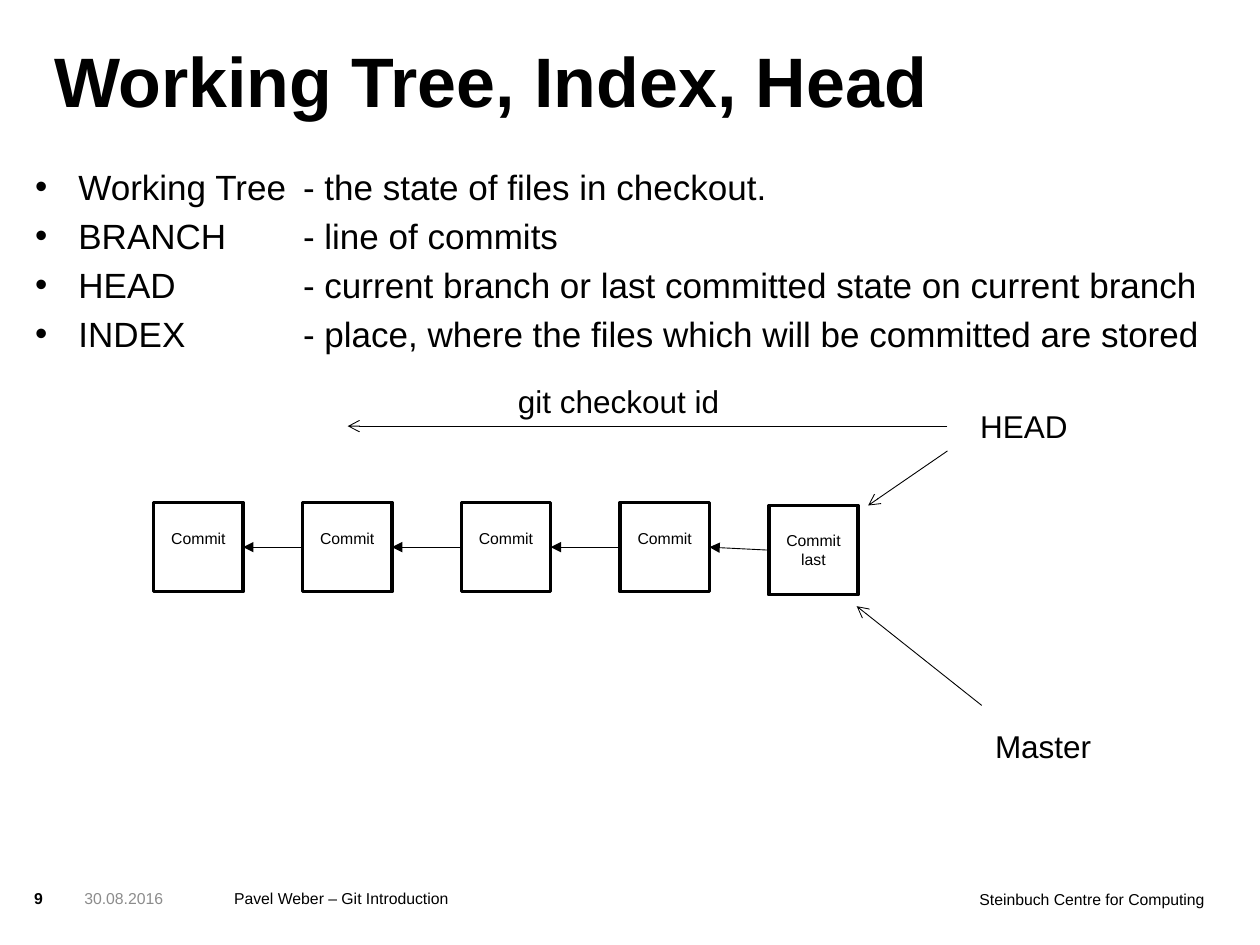
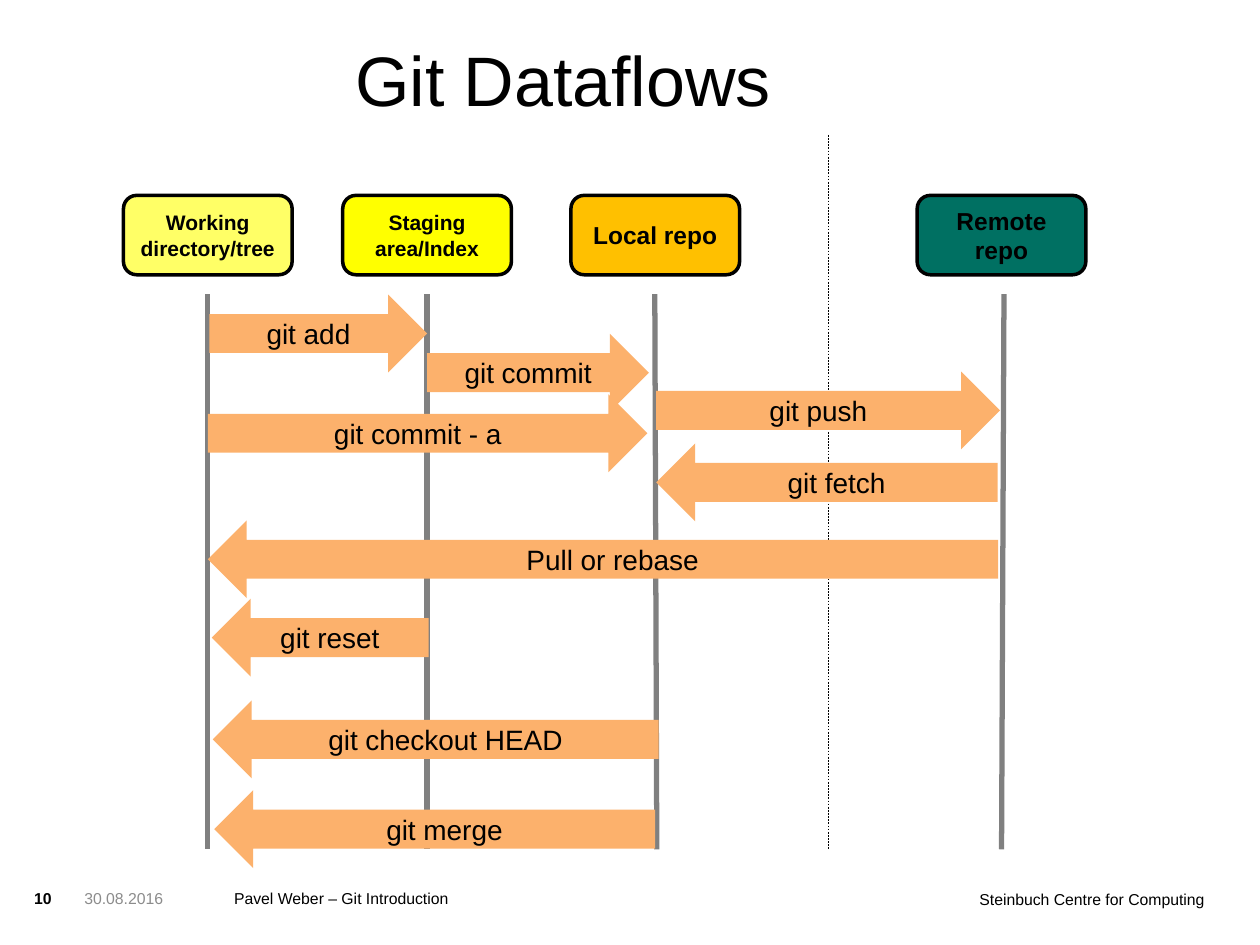
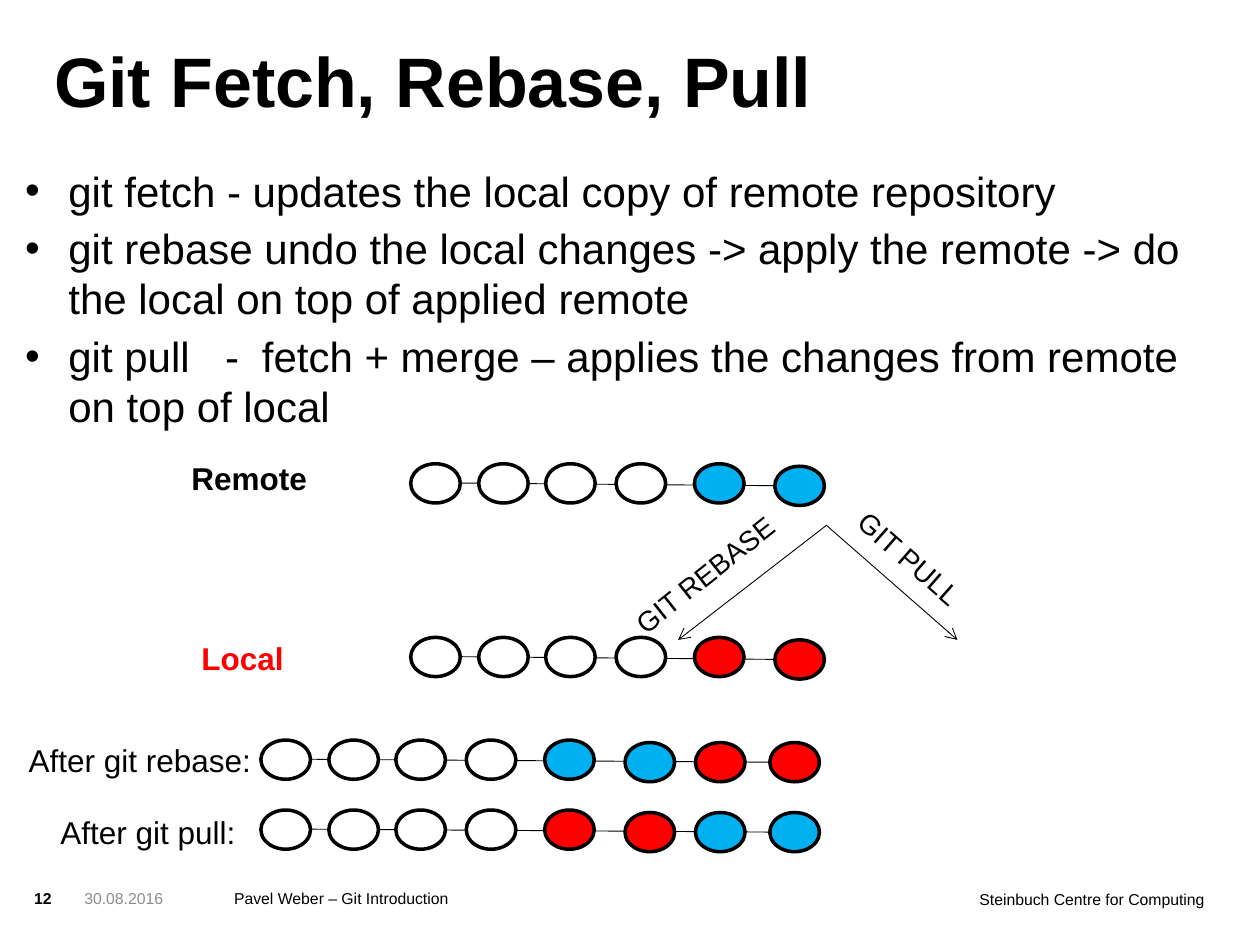
from lxml import etree
from pptx import Presentation
from pptx.dml.color import RGBColor
from pptx.enum.dml import MSO_LINE as Dash
from pptx.enum.shapes import MSO_CONNECTOR as Link, MSO_SHAPE as Kind
from pptx.enum.text import MSO_ANCHOR as Anchor, MSO_AUTO_SIZE as Fit, PP_ALIGN as Align
from pptx.oxml.ns import qn
from pptx.util import Cm, Pt

BLACK = RGBColor(0x00, 0x00, 0x00)
WHITE = RGBColor(0xFF, 0xFF, 0xFF)
GREY = RGBColor(0x80, 0x80, 0x80)
PALE = RGBColor(0x8C, 0x8C, 0x8C)
RED = RGBColor(0xFF, 0x00, 0x00)
BLUE = RGBColor(0x00, 0xB0, 0xF0)
LEMON = RGBColor(0xFF, 0xFF, 0x66)
YELLOW = RGBColor(0xFF, 0xFF, 0x00)
AMBER = RGBColor(0xFF, 0xC0, 0x00)
GREEN = RGBColor(0x00, 0x70, 0x62)
PEACH = RGBColor(0xFC, 0xB1, 0x6C)
FONT = "Arial"


class Deck:
    """Holds the style and the current slide."""

    def __init__(self):
        self.prs = Presentation()
        self.prs.slide_width, self.prs.slide_height = Cm(25.4), Cm(19.05)
        self.slide = None

    def page(self, number):
        """Start a slide with its footer."""
        self.slide = self.prs.slides.add_slide(self.prs.slide_layouts[6])
        self.block(16.69, 17.93, 7.59, 1, "Steinbuch Centre for Computing", 9, align=Align.RIGHT)
        self.block(0.69, 17.91, 0.91, 0.6, str(number), 9, bold=True)
        self.block(4.72, 17.91, 11.81, 1, "Pavel Weber – Git Introduction", 9)
        self.block(1.7, 17.91, 2.9, 1, "30.08.2016", 9, PALE)

    def style(self, para, size, color=BLACK, bold=False, align=Align.LEFT):
        para.alignment = align
        font = para.font
        font.name, font.size, font.bold = FONT, Pt(size), bold
        font.color.rgb = color

    def box(self, x, y, w, h):
        return self.slide.shapes.add_textbox(Cm(x), Cm(y), Cm(w), Cm(h))

    def block(self, x, y, w, h, text, size, color=BLACK, bold=False, align=Align.LEFT):
        """Wrapped text without insets."""
        frame = self.box(x, y, w, h).text_frame
        frame.word_wrap = True
        frame.margin_left = frame.margin_right = frame.margin_top = frame.margin_bottom = 0
        frame.text = text
        self.style(frame.paragraphs[0], size, color, bold, align)
        return frame

    def title(self, text):
        frame = self.block(1.09, 0.91, 19.2, 1.55, text, 40, bold=True)
        frame.vertical_anchor = Anchor.BOTTOM

    def label(self, x, y, w, h, text, size=18, color=BLACK, bold=False, turn=0):
        """One unwrapped line of text."""
        box = self.box(x, y, w, h)
        box.rotation = turn
        frame = box.text_frame
        frame.word_wrap, frame.auto_size = False, Fit.SHAPE_TO_FIT_TEXT
        frame.text = text
        self.style(frame.paragraphs[0], size, color, bold)

    def bullets(self, x, w, items, size, tabs):
        frame = self.block(x, 3.33, w, 13.59, items[0], size)
        for item in items[1:]:
            frame.add_paragraph().text = item
        for i, para in enumerate(frame.paragraphs):
            if i:
                para.space_before = Pt(4)
            props = para._p.get_or_add_pPr()
            props.set("marL", str(Cm(0.87)))
            props.set("indent", str(Cm(-0.87)))
            etree.SubElement(props, qn("a:buFont"), typeface=FONT)
            etree.SubElement(props, qn("a:buChar"), char="•")
            stops = etree.SubElement(props, qn("a:tabLst"))
            for tab in tabs:
                etree.SubElement(stops, qn("a:tab"), pos=str(Cm(tab)), algn="l")
            self.style(para, size)

    def shape(self, kind, x, y, w, h, fill, edge=True, text="", size=9, bold=False):
        shape = self.slide.shapes.add_shape(kind, Cm(x), Cm(y), Cm(w), Cm(h))
        shape.shadow.inherit = False
        shape.fill.solid()
        shape.fill.fore_color.rgb = fill
        if edge:
            shape.line.color.rgb, shape.line.width = BLACK, Pt(2)
        else:
            shape.line.fill.background()
        if text:
            frame = shape.text_frame
            frame.text, frame.vertical_anchor = text, Anchor.MIDDLE
            for para in frame.paragraphs:
                self.style(para, size, bold=bold, align=Align.CENTER)
        return shape

    def line(self, x1, y1, x2, y2, color=BLACK, width=0.5, head=None):
        line = self.slide.shapes.add_connector(Link.STRAIGHT, Cm(x1), Cm(y1), Cm(x2), Cm(y2))
        line.line.color.rgb, line.line.width = color, Pt(width)
        if head:
            etree.SubElement(line.line._get_or_add_ln(), qn("a:tailEnd"), type=head)
        etree.SubElement(line._element.spPr, qn("a:effectLst"))
        return line

    def chain(self, x, y, colors):
        """Row of commits on a thread, the later ones a little lower."""
        steps = [0, 1.37, 2.72, 4.14, 5.72, 7.34, 8.76, 10.26][:len(colors)]
        self.line(x + 0.1, y + 0.38, x + steps[-1] + 0.86, y + 0.45, head="triangle")
        for i, (step, color) in enumerate(zip(steps, colors)):
            drop = 0.05 if i > 4 else 0
            self.shape(Kind.FLOWCHART_CONNECTOR, x + step, y + drop, 1, 0.79, color)


def trees(deck):
    deck.page(9)
    deck.title("Working Tree, Index, Head")
    deck.bullets(0.71, 23.8, [
        "Working Tree\t- the state of files in checkout.",
        "BRANCH\t- line of commits",
        "HEAD\t- current branch or last committed state on current branch",
        "INDEX\t- place, where the files which will be committed are stored",
    ], 20, [5.4])

    # Commits, each pointing back to the one before
    side, top = 1.8, 10.13
    boxes = []
    for x in (3.1, 6.1, 9.3, 12.5):
        box = deck.shape(Kind.RECTANGLE, x, top, side, side, WHITE, text="Commit")
        box.text_frame.margin_bottom = Cm(0.5)
        boxes.append(box)
    boxes.append(deck.shape(Kind.RECTANGLE, 15.5, top + 0.06, side, side, WHITE, text="Commit\nlast"))
    for old, new in zip(boxes, boxes[1:]):
        link = deck.line(0, 0, 1, 1, head="triangle")
        link.begin_connect(new, 1)
        link.end_connect(old, 3)

    # Pointers
    for ends in ((19.1, 9.09, 17.5, 10.19), (19.79, 14.22, 17.27, 12.22), (19.1, 8.59, 7.01, 8.59)):
        deck.line(*ends, head="arrow")
    deck.label(19.51, 8.08, 2.46, 1.02, "HEAD")
    deck.label(19.81, 14.53, 2.46, 1.02, "Master")
    deck.label(10.19, 7.57, 4.98, 1.02, "git checkout id")


def flows(deck):
    deck.page(10)
    deck.label(6.91, 0.61, 9.37, 1.96, "Git Dataflows", 40)

    # Places and their lifelines: left, line top, line foot
    for text, x, head, foot, fill, size in (
        ("Working directory/tree", 2.49, 4.19, 4.19, LEMON, 12),
        ("Staging area/Index", 6.91, 8.61, 8.61, YELLOW, 12),
        ("Local repo", 11.51, 13.2, 13.24, AMBER, 14),
        ("Remote repo", 18.49, 20.24, 20.19, GREEN, 14),
    ):
        deck.shape(Kind.ROUNDED_RECTANGLE, x, 3.94, 3.4, 1.6, fill, text=text, size=size, bold=True)
        deck.line(head, 5.93, foot, 17.12, GREY, 3)
    border = deck.line(16.69, 2.72, 16.69, 17.12, width=0.25)
    border.line.dash_style = Dash.DASH

    # Commands
    right, left = Kind.RIGHT_ARROW, Kind.LEFT_ARROW
    for text, kind, x, y, w in (
        ("git add", right, 4.22, 5.94, 4.39),
        ("git commit", right, 8.61, 6.73, 4.47),
        ("git push", right, 13.23, 7.49, 6.93),
        ("git commit - a", right, 4.19, 7.95, 8.86),
        ("git fetch", left, 13.23, 8.94, 6.88),
        ("Pull or rebase", left, 4.19, 10.49, 15.93),
        ("git reset", left, 4.27, 12.07, 4.37),
        ("git checkout HEAD", left, 4.29, 14.12, 8.99),
        ("git merge", left, 4.32, 15.93, 8.89),
    ):
        deck.shape(kind, x, y, w, 1.57, PEACH, False, text, 16)


def pulls(deck):
    deck.page(12)
    deck.title("Git Fetch, Rebase, Pull")
    deck.bullets(0.51, 23.62, [
        "git fetch - updates the local copy of remote repository",
        "git rebase undo the local changes -> apply the remote -> do the local on top of applied remote",
        "git pull\t-\tfetch + merge – applies the changes from remote on top of local",
    ], 24, [4.03, 4.77])

    # Histories
    base, far, near = [WHITE] * 4, [BLUE] * 2, [RED] * 2
    deck.chain(8.28, 9.35, base + far)
    deck.chain(8.28, 12.85, base + near)
    deck.chain(5.26, 14.92, base + far + near)
    deck.chain(5.26, 16.33, base + near + far)
    deck.label(3.61, 9.12, 3.05, 1.02, "Remote", bold=True)
    deck.label(3.81, 12.75, 2.36, 1.02, "Local", color=RED, bold=True)
    deck.label(0.33, 14.81, 5.03, 1.02, "After git rebase:")
    deck.label(0.97, 16.26, 4.42, 1.02, "After git pull:")

    # Two ways from remote to local
    for x in (13.67, 19.3):
        deck.line(16.66, 10.59, x, 12.9, head="arrow")
    deck.label(12.27, 11.1, 3.91, 0.94, "GIT REBASE", 16, turn=-38.4)
    deck.label(16.81, 10.85, 3.18, 0.94, "GIT PULL", 16, turn=41.3)


def main():
    deck = Deck()
    for build in (trees, flows, pulls):
        build(deck)
    deck.prs.save("out.pptx")


if __name__ == "__main__":
    main()
